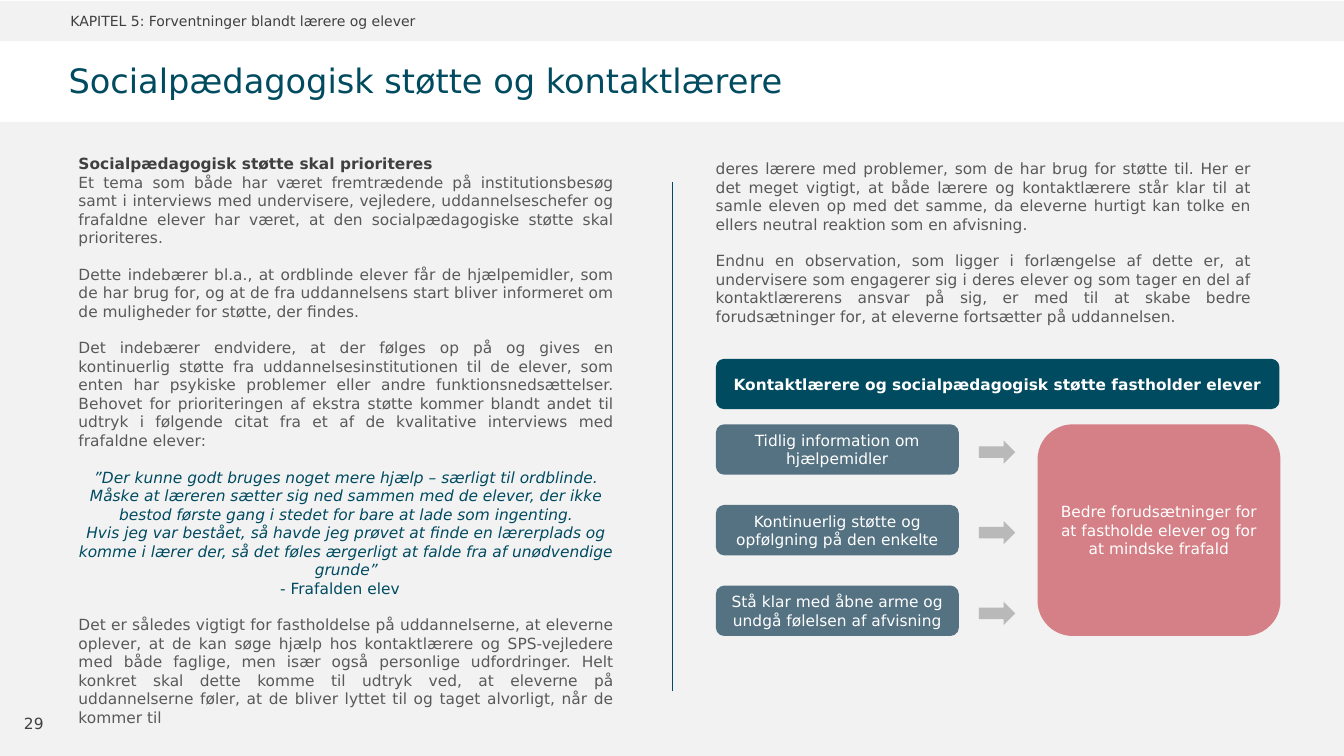
from pptx import Presentation
from pptx.dml.color import RGBColor
from pptx.enum import shapes, text
from pptx.oxml import ns
from pptx.util import Inches, Pt
from lxml import etree

FONT = "DejaVu Sans"
PANEL = RGBColor(0xF2, 0xF2, 0xF2)
PETROL = RGBColor(0x00, 0x4B, 0x60)
SLATE = RGBColor(0x54, 0x72, 0x82)
ROSE = RGBColor(0xD4, 0x80, 0x86)
ARROW_GREY = RGBColor(0xB9, 0xB9, 0xB9)
DARK = RGBColor(0x40, 0x40, 0x40)
BODY = RGBColor(0x59, 0x59, 0x59)
WHITE = RGBColor(0xFF, 0xFF, 0xFF)
LEFT, CENTER, JUSTIFY = text.PP_ALIGN.LEFT, text.PP_ALIGN.CENTER, text.PP_ALIGN.JUSTIFY
RECTANGLE = shapes.MSO_SHAPE.RECTANGLE
ROUNDED = shapes.MSO_SHAPE.ROUNDED_RECTANGLE
ARROW = shapes.MSO_SHAPE.RIGHT_ARROW

presentation = Presentation()
presentation.slide_width = Inches(13.33)
presentation.slide_height = Inches(7.5)
slide = presentation.slides.add_slide(presentation.slide_layouts[6])


def write(shape, content, size=11, color=BODY, align=LEFT, bold=False,
          italic=False, before=0, indent=0, anchor=text.MSO_ANCHOR.MIDDLE):
    """Add one paragraph to a shape; the first one fills the empty paragraph."""
    frame = shape.text_frame
    frame.word_wrap = True
    frame.vertical_anchor = anchor
    paragraph = frame.add_paragraph() if frame.text else frame.paragraphs[0]
    paragraph.alignment = align
    paragraph.space_before = Pt(before)
    if indent:
        paragraph._p.get_or_add_pPr().set("marL", str(Inches(indent)))
    run = paragraph.add_run()
    run.text = content
    run.font.name = FONT
    run.font.size = Pt(size)
    run.font.color.rgb = color
    run.font.bold = bold
    run.font.italic = italic
    return paragraph


def add_block(kind, left, top, width, height, fill):
    """Add a filled shape without outline, or a text box if kind is None."""
    place = [Inches(value) for value in (left, top, width, height)]
    if kind is None:
        return slide.shapes.add_textbox(*place)
    shape = slide.shapes.add_shape(kind, *place)
    shape.shadow.inherit = False
    shape.fill.solid()
    shape.fill.fore_color.rgb = fill
    shape.line.fill.background()
    return shape


# Background bands
add_block(RECTANGLE, 0, 0.01, 13.33, 0.4, PANEL)
add_block(RECTANGLE, 0, 1.21, 13.33, 6.29, PANEL)

# Chapter, title and page number
chapter = add_block(None, 0.6, 0, 5.7, 0.41, None)
write(chapter, "KAPITEL 5: Forventninger blandt lærere og elever", size=10, color=DARK)

title = add_block(None, 0.68, 0.42, 11.89, 0.79, None)
title_frame = title.text_frame
title_frame.margin_left = title_frame.margin_right = 0
title_frame.margin_top = title_frame.margin_bottom = 0
heading = write(title, "Socialpædagogisk støtte og kontaktlærere", size=24, color=PETROL)
heading.line_spacing = 0.9

page_number = add_block(None, 0.09, 6.98, 0.49, 0.4, None)
write(page_number, "29", color=DARK, align=CENTER)

# Left column
GAP = 13
body = dict(align=JUSTIFY)
quote = dict(align=CENTER, color=PETROL, italic=True)
left_column = [
    ("Socialpædagogisk støtte skal prioriteres", dict(color=DARK, bold=True)),
    ("Et tema som både har været fremtrædende på institutionsbesøg samt i interviews med "
     "undervisere, vejledere, uddannelseschefer og frafaldne elever har været, at den "
     "socialpædagogiske støtte skal prioriteres.", body),
    ("Dette indebærer bl.a., at ordblinde elever får de hjælpemidler, som de har brug for, "
     "og at de fra uddannelsens start bliver informeret om de muligheder for støtte, der "
     "findes.", dict(body, before=GAP)),
    ("Det indebærer endvidere, at der følges op på og gives en kontinuerlig støtte fra "
     "uddannelsesinstitutionen til de elever, som enten har psykiske problemer eller andre "
     "funktionsnedsættelser. Behovet for prioriteringen af ekstra støtte kommer blandt andet "
     "til udtryk i følgende citat fra et af de kvalitative interviews med frafaldne elever:",
     dict(body, before=GAP)),
    ("”Der kunne godt bruges noget mere hjælp – særligt til ordblinde. Måske at læreren "
     "sætter sig ned sammen med de elever, der ikke bestod første gang i stedet for bare at "
     "lade som ingenting.", dict(quote, before=GAP)),
    ("Hvis jeg var bestået, så havde jeg prøvet at finde en lærerplads og komme i lærer der, "
     "så det føles ærgerligt at falde fra af unødvendige grunde”", quote),
    ("- Frafalden elev", dict(color=PETROL, indent=2)),
    ("Det er således vigtigt for fastholdelse på uddannelserne, at eleverne oplever, at de "
     "kan søge hjælp hos kontaktlærere og SPS-vejledere med både faglige, men især også "
     "personlige udfordringer. Helt konkret skal dette komme til udtryk ved, at eleverne på "
     "uddannelserne føler, at de bliver lyttet til og taget alvorligt, når de kommer til",
     dict(body, before=GAP)),
]

# Right column
right_column = [
    ("deres lærere med problemer, som de har brug for støtte til. Her er det meget vigtigt, "
     "at både lærere og kontaktlærere står klar til at samle eleven op med det samme, da "
     "eleverne hurtigt kan tolke en ellers neutral reaktion som en afvisning.", body),
    ("Endnu en observation, som ligger i forlængelse af dette er, at undervisere som "
     "engagerer sig i deres elever og som tager en del af kontaktlærerens ansvar på sig, er "
     "med til at skabe bedre forudsætninger for, at eleverne fortsætter på uddannelsen.",
     dict(body, before=GAP)),
]

for left, top, height, column in [(0.68, 1.48, 5.21, left_column),
                                  (7, 1.53, 5.75, right_column)]:
    column_box = add_block(None, left, top, 5.51, height, None)
    for content, style in column:
        write(column_box, content, anchor=text.MSO_ANCHOR.TOP, **style)

# Column divider
divider = slide.shapes.add_connector(
    shapes.MSO_CONNECTOR.STRAIGHT, Inches(6.67), Inches(1.81), Inches(6.67), Inches(6.86))
divider.line.color.rgb = PETROL
divider.line.width = Pt(0.5)
etree.SubElement(divider._element.spPr, ns.qn("a:effectLst"))

# Diagram: banner, three measures with arrows, and the outcome
banner = add_block(ROUNDED, 7.1, 3.56, 5.59, 0.5, PETROL)
write(banner, "Kontaktlærere og socialpædagogisk støtte fastholder elever",
      color=WHITE, align=CENTER, bold=True)

measures = [
    "Tidlig information om hjælpemidler",
    "Kontinuerlig støtte og opfølgning på den enkelte",
    "Stå klar med åbne arme og undgå følelsen af afvisning",
]
for row, measure in enumerate(measures):
    top = 4.21 + row * 0.8
    measure_box = add_block(ROUNDED, 7.1, top, 2.41, 0.5, SLATE)
    write(measure_box, measure, color=WHITE, align=CENTER)
    add_block(ARROW, 9.71, top + 0.16, 0.36, 0.23, ARROW_GREY)

outcome = add_block(ROUNDED, 10.29, 4.21, 2.41, 2.1, ROSE)
write(outcome, "Bedre forudsætninger for at fastholde elever og for at mindske frafald",
      color=WHITE, align=CENTER)

presentation.save("out.pptx")
